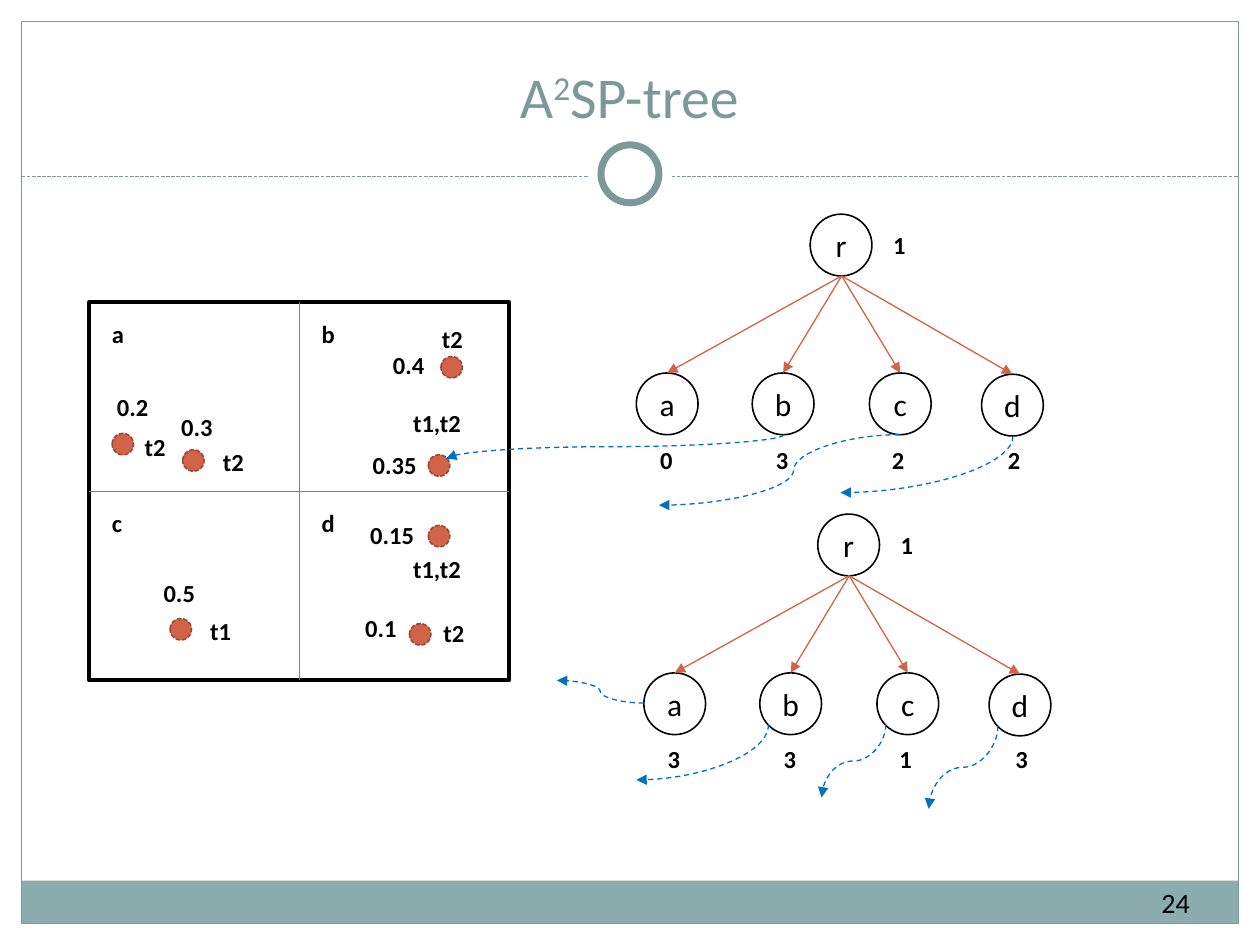
import dataclasses

import lxml.etree
import pptx
import pptx.dml.color
import pptx.enum.dml
import pptx.enum.shapes
import pptx.enum.text
import pptx.oxml
import pptx.oxml.ns
import pptx.util

Inches = pptx.util.Inches
Pt = pptx.util.Pt
SHAPE = pptx.enum.shapes.MSO_SHAPE
LINK = pptx.enum.shapes.MSO_CONNECTOR
DASH = pptx.enum.dml.MSO_LINE
ALIGN = pptx.enum.text.PP_ALIGN
ANCHOR = pptx.enum.text.MSO_ANCHOR


@dataclasses.dataclass(frozen=True)
class Theme:
    font: str = "Calibri"
    ink: str = "000000"
    paper: str = "FFFFFF"
    sage: str = "7C999A"
    band: str = "8CADAE"
    rust: str = "D16349"
    rim: str = "9B4936"
    blue: str = "0070C0"
    gray: str = "808080"
    title: int = 33
    node: int = 18
    page: int = 16
    label: int = 14


THEME = Theme()


def color(code):
    return pptx.dml.color.RGBColor.from_string(code)


def apply(target, values):
    for name, value in values.items():
        setattr(target, name, value)


def add_tag(parent, tag, **attrs):
    return lxml.etree.SubElement(parent, pptx.oxml.ns.qn(tag), attrs)


def stroke(line, code, width, dash=None):
    line.color.rgb = color(code)
    apply(line, {"width": Pt(width), "dash_style": dash})


def shape(parts, kind, box, fill=None, line=None):
    item = parts.add_shape(kind, *map(Inches, box))
    item.shadow.inherit = False
    if fill:
        item.fill.solid()
        item.fill.fore_color.rgb = color(fill)
    else:
        item.fill.background()
    if line:
        stroke(item.line, *line)
    else:
        item.line.fill.background()
    return item


def write(para, text, size, code=THEME.ink, bold=False):
    run = para.add_run()
    run.text = text
    apply(run.font, {"name": THEME.font, "size": Pt(size), "bold": bold})
    run.font.color.rgb = color(code)
    return run


def textbox(parts, box, anchor=ANCHOR.TOP, align=ALIGN.LEFT):
    frame = parts.add_textbox(*map(Inches, box)).text_frame
    apply(frame, {"word_wrap": True, "vertical_anchor": anchor})
    para = frame.paragraphs[0]
    para.alignment = align
    return para


def label(parts, x, y, text, wide=0.8):
    write(textbox(parts, (x, y, wide, 0.34)), text, THEME.label, bold=True)


def link(parts, start, end, line, arrow=True, kind=LINK.STRAIGHT):
    item = parts.add_connector(kind, *map(Inches, (*start, *end)))
    stroke(item.line, *line)
    if arrow:
        add_tag(item.line._get_or_add_ln(), "a:tailEnd", type="triangle")
    add_tag(item._element.spPr, "a:effectLst")
    return item


def curve(parts, start, end, down=True, bends=3, adj=None):
    """Dashed curve that leaves its start downwards, or else sideways."""
    (x1, y1), (x2, y2) = start, end
    if down:
        # Turned a quarter, so width and height trade places about the centre
        mx, my = (x1 + x2) / 2, (y1 + y2) / 2
        rx, ry = abs(y2 - y1) / 2, abs(x2 - x1) / 2
        start, end = (mx - rx, my - ry), (mx + rx, my + ry)
    item = link(parts, start, end, (THEME.blue, 0.75, DASH.DASH), kind=LINK.CURVE)
    if down:
        item._element.spPr.find(pptx.oxml.ns.qn("a:xfrm")).set("rot", "5400000")
    geom = item._element.spPr.find(pptx.oxml.ns.qn("a:prstGeom"))
    geom.set("prst", f"curvedConnector{bends}")
    if adj:
        guides = geom.find(pptx.oxml.ns.qn("a:avLst"))
        add_tag(guides, "a:gd", name="adj1", fmla=f"val {round(adj * 100000)}")


def draw_frame(parts, box):
    x, y, w, h = box
    mid = x + w / 2
    # Footer band, border and divider
    shape(parts, SHAPE.RECTANGLE, (x, y + h - 0.34, w, 0.34), THEME.band)
    shape(parts, SHAPE.RECTANGLE, box, line=(THEME.sage, 0.75))
    link(parts, (x, y + 1.23), (x + w, y + 1.23),
         (THEME.sage, 0.75, DASH.SQUARE_DOT), arrow=False)
    # Ring on the divider
    for size, line in ((0.67, None), (0.46, (THEME.sage, 4))):
        ring = (mid - size / 2, y + 1.21 - size / 2, size, size)
        shape(parts, SHAPE.OVAL, ring, THEME.paper, line)
    # Title and page number
    para = textbox(parts, (x + 0.16, y + 0.08, w - 0.33, 0.83),
                   ANCHOR.BOTTOM, ALIGN.CENTER)
    for text, base in (("A", 0), ("2", 30000), ("SP-tree", 0)):
        run = write(para, text, THEME.title, THEME.sage)
        if base:
            run.font._element.set("baseline", str(base))
    para = textbox(parts, (x + w - 0.75, y + h - 0.41, 0.5, 0.48),
                   ANCHOR.MIDDLE, ALIGN.CENTER)
    write(para, "24", THEME.page)


def draw_map(parts, box):
    x, y, w, h = box
    shape(parts, SHAPE.RECTANGLE, box, line=(THEME.ink, 2.25))
    # Quadrants
    thin = (THEME.gray, 0.75)
    link(parts, (x, y + h / 2), (x + w, y + h / 2), thin, arrow=False)
    link(parts, (x + w / 2, y), (x + w / 2, y + h), thin, arrow=False)
    for i, name in enumerate("abcd"):
        row, col = divmod(i, 2)
        label(parts, x + 0.08 + col * w / 2, y + 0.08 + row * h / 2, name, 0.31)
    # Points: dot, terms with their place, score with its place
    points = (
        ((2.79, 0.43), "t2", (2.70, 0.12), "0.4", (2.31, 0.33)),
        ((2.69, 1.21), "t1,t2", (2.47, 0.79), "0.35", (2.15, 1.12)),
        ((2.69, 1.77), "t1,t2", (2.47, 1.95), "0.15", (2.13, 1.68)),
        ((2.54, 2.55), "t2", (2.71, 2.46), "0.1", (2.09, 2.42)),
        ((0.64, 2.51), "t1", (0.86, 2.44), "0.5", (0.49, 2.14)),
        ((0.18, 1.04), "t2", (0.34, 0.98), "0.2", (0.12, 0.66)),
        ((0.74, 1.17), "t2", (0.96, 1.10), "0.3", (0.63, 0.82)),
    )
    for (dx, dy), terms, (tx, ty), score, (sx, sy) in points:
        shape(parts, SHAPE.OVAL, (x + dx, y + dy, 0.17, 0.17), THEME.rust,
              (THEME.rim, 0.9, DASH.SQUARE_DOT))
        label(parts, x + tx, y + ty, terms)
        label(parts, x + sx, y + sy, score)


def draw_node(parts, x, y, name):
    node = shape(parts, SHAPE.OVAL, (x, y, 0.49, 0.49), line=(THEME.ink, 0.9))
    node.text_frame.vertical_anchor = ANCHOR.MIDDLE
    para = node.text_frame.paragraphs[0]
    para.alignment = ALIGN.CENTER
    write(para, name, THEME.node)
    return node


def draw_tree(parts, box, scores):
    x, y = box[:2]
    draw_node(parts, x + 1.38, y, "r")
    label(parts, x + 1.94, y + 0.08, "1", 0.31)
    places = ((0, 1.26), (0.92, 1.26), (1.85, 1.26), (2.74, 1.27))
    for i, (name, score, (dx, dy)) in enumerate(zip("abcd", scores, places)):
        node = draw_node(parts, x + dx, y + dy, name)
        edge = link(parts, (x + 1.63, y + 0.49), (x + dx + 0.25, y + dy),
                    (THEME.rust, 0.75))
        edge.end_connect(node, 0)
        label(parts, x + 0.09 + 0.92 * i, y + 1.78, score, 0.31)


def draw_curves(parts, box, paths):
    x, y = box[:2]
    for (x1, y1), (x2, y2), form in paths:
        curve(parts, (x + x1, y + y1), (x + x2, y + y2), **form)


def main():
    deck = pptx.Presentation()
    apply(deck, {"slide_width": Inches(10), "slide_height": Inches(7.5)})
    parts = deck.slides.add_slide(deck.slide_layouts[6]).shapes

    draw_frame(parts, (0.17, 0.17, 9.66, 7.16))
    draw_map(parts.add_group_shape().shapes, (0.71, 2.4, 3.33, 3))

    # Trees: box, scores, and curves with their form
    trees = (
        ((5.05, 1.7, 3.23, 2.12), "0322", (
            ((1.17, 1.75), (-1.51, 1.94), {}),
            ((2.09, 1.75), (0.18, 2.31), {"down": False, "adj": 0.44}),
            ((2.99, 1.76), (1.62, 2.21), {"bends": 2}))),
        ((5.11, 4.08, 3.23, 2.12), "3313", (
            ((0, 1.5), (-0.69, 1.32), {"down": False}),
            ((0.99, 1.67), (-0.06, 2.11), {"bends": 2}),
            ((1.92, 1.67), (1.41, 2.25), {}),
            ((2.81, 1.68), (2.26, 2.34), {}))),
    )
    for box, scores, paths in trees:
        draw_tree(parts.add_group_shape().shapes, box, scores)
        draw_curves(parts, box, paths)

    deck.save("out.pptx")


if __name__ == "__main__":
    main()
